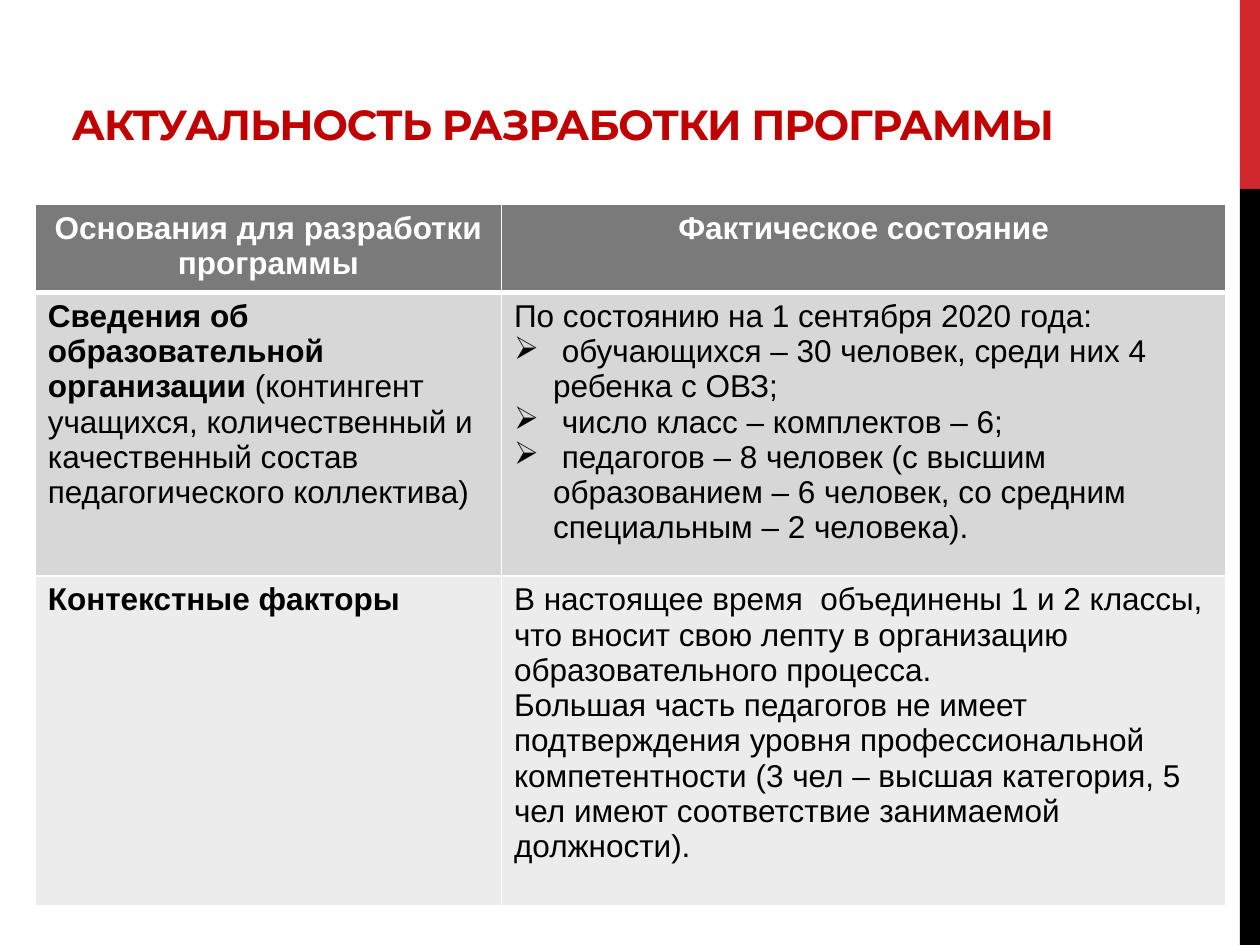
import pptx
import pptx.util
import pptx.dml.color
import pptx.enum.shapes
import pptx.enum.text
import pptx.oxml
import pptx.oxml.ns

Inches, Pt = pptx.util.Inches, pptx.util.Pt
ALIGN = pptx.enum.text.PP_ALIGN

# Content: a cell is a list of paragraphs, a paragraph is (bulleted, [(text, bold)])
TITLE = "АКТУАЛЬНОСТЬ РАЗРАБОТКИ ПРОГРАММЫ"
ROWS = [
    [
        [(False, [("Основания для разработки программы", True)])],
        [(False, [("Фактическое состояние", True)])],
    ],
    [
        [(False, [("Сведения об образовательной организации ", True),
                  ("(контингент учащихся, количественный и качественный состав "
                   "педагогического коллектива)", False)])],
        [(False, [("По состоянию на 1 сентября 2020 года:", False)]),
         (True, [(" обучающихся – 30 человек, среди них 4 ребенка с ОВЗ;", False)]),
         (True, [(" число класс – комплектов – 6;", False)]),
         (True, [(" педагогов – 8 человек (с высшим образованием – 6 человек, "
                  "со средним специальным – 2 человека).", False)])],
    ],
    [
        [(False, [("Контекстные факторы", True)])],
        [(False, [("В настоящее время  объединены 1 и 2 классы, что вносит свою лепту "
                   "в организацию образовательного процесса.", False)]),
         (False, [("Большая часть педагогов не имеет подтверждения уровня "
                   "профессиональной компетентности (3 чел – высшая категория, "
                   "5 чел имеют соответствие занимаемой должности).", False)])],
    ],
]

# Format values
COLORS = {"title": "C00000", "accent": "D1282E", "black": "000000", "white": "FFFFFF",
          "header": "7A7A7A", "odd": "D7D7D7", "even": "ECECEC"}
ROW_FILLS = ["header", "odd", "even"]
COLUMN_WIDTHS = [3.7, 5.75]
ROW_HEIGHTS = [0.67, 2.25, 2.62]
STRIPES = [("accent", 0, 1.5), ("black", 1.5, 6)]
TITLE_FONT = {"name": "Montserrat", "size": Pt(24), "bold": True}
CELL_FONT = {"name": "Arial", "size": Pt(18)}
BULLET, BULLET_INDENT = "➢", Inches(0.31)


def color(name):
    return pptx.dml.color.RGBColor.from_string(COLORS[name])


def paint(target, name):
    target.fill.solid()
    target.fill.fore_color.rgb = color(name)


def add_span(para, text, color_name, **formats):
    span = para.add_run()
    span.text = text
    for key, value in formats.items():
        setattr(span.font, key, value)
    span.font.color.rgb = color(color_name)
    return span


def add_bullet(para):
    properties = para._p.get_or_add_pPr()
    properties.set("marL", str(BULLET_INDENT))
    properties.set("indent", str(-BULLET_INDENT))
    mark = pptx.oxml.parse_xml(
        f'<a:buChar {pptx.oxml.ns.nsdecls("a")} char="{BULLET}"/>')
    properties.append(mark)


def add_borders(cell, widths):
    properties = cell._tc.get_or_add_tcPr()
    for place, (side, width) in enumerate(widths.items()):
        line = pptx.oxml.parse_xml(
            f'<a:ln{side} {pptx.oxml.ns.nsdecls("a")} w="{Pt(width)}"><a:solidFill>'
            f'<a:srgbClr val="{COLORS["white"]}"/></a:solidFill></a:ln{side}>')
        properties.insert(place, line)


def fill_cell(cell, paragraphs, row):
    header = row == 0
    paint(cell, ROW_FILLS[row])
    add_borders(cell, {"L": 1, "R": 1, "T": 3 if row == 1 else 1, "B": 3 if header else 1})
    for number, (bulleted, spans) in enumerate(paragraphs):
        frame = cell.text_frame
        para = frame.add_paragraph() if number else frame.paragraphs[0]
        para.alignment = ALIGN.CENTER if header else ALIGN.LEFT
        if bulleted:
            add_bullet(para)
        for text, bold in spans:
            add_span(para, text, "white" if header else "black", bold=bold, **CELL_FONT)


def main():
    deck = pptx.Presentation()
    deck.slide_width, deck.slide_height = Inches(10), Inches(7.5)
    page = deck.slides.add_slide(deck.slide_layouts[6])

    # Stripes on the right edge
    for name, top, height in STRIPES:
        stripe = page.shapes.add_shape(
            pptx.enum.shapes.MSO_SHAPE.RECTANGLE,
            Inches(9.84), Inches(top), Inches(0.16), Inches(height))
        stripe.shadow.inherit = False
        paint(stripe, name)
        stripe.line.fill.background()

    # Title
    box = page.shapes.add_textbox(Inches(0.47), Inches(0.45), Inches(9.03), Inches(0.78))
    box.text_frame.word_wrap = True
    box.text_frame.vertical_anchor = pptx.enum.text.MSO_ANCHOR.BOTTOM
    span = add_span(box.text_frame.paragraphs[0], TITLE, "title", **TITLE_FONT)
    span._r.get_or_add_rPr().set("spc", "-60")

    # Table
    table = page.shapes.add_table(
        len(ROWS), len(COLUMN_WIDTHS), Inches(0.28), Inches(1.62),
        Inches(sum(COLUMN_WIDTHS)), Inches(sum(ROW_HEIGHTS))).table
    for column, width in zip(table.columns, COLUMN_WIDTHS):
        column.width = Inches(width)
    for row, height in zip(table.rows, ROW_HEIGHTS):
        row.height = Inches(height)
    for row, cells in enumerate(ROWS):
        for column, paragraphs in enumerate(cells):
            fill_cell(table.cell(row, column), paragraphs, row)

    deck.save("out.pptx")


if __name__ == "__main__":
    main()
